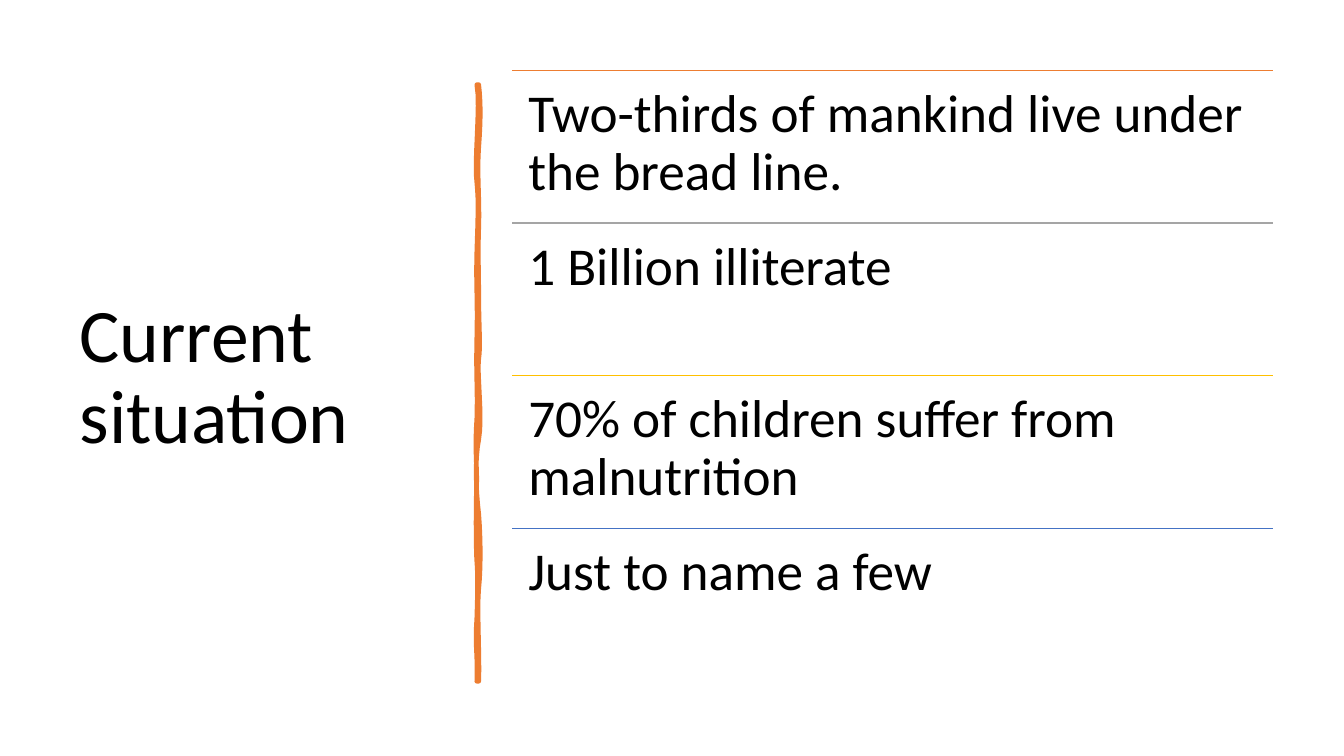
from lxml import etree
from pptx import Presentation
from pptx.dml.color import RGBColor
from pptx.enum.shapes import MSO_CONNECTOR
from pptx.enum.text import MSO_ANCHOR
from pptx.oxml.ns import qn
from pptx.util import Inches, Pt

STRAIGHT = MSO_CONNECTOR.STRAIGHT
TOP = MSO_ANCHOR.TOP
MIDDLE = MSO_ANCHOR.MIDDLE

BLACK = RGBColor(0x00, 0x00, 0x00)
ORANGE = RGBColor(0xED, 0x7D, 0x31)
GREY = RGBColor(0xA5, 0xA5, 0xA5)
GOLD = RGBColor(0xFF, 0xC0, 0x00)
BLUE = RGBColor(0x44, 0x72, 0xC4)

GRID = 100
LIST_LEFT, LIST_WIDTH = 38.11, 56.64
CONTENT_TOP, ROW_PITCH = 9.33, 20.18
BRUSH_AXIS, SWAY_UNIT, CURVE_STEPS = 35.55, 0.075, 8

FACTS = [
    ("Two-thirds of mankind live under the bread line.", ORANGE),
    ("1 Billion illiterate", GREY),
    ("70% of children suffer from malnutrition", GOLD),
    ("Just to name a few", BLUE),
]

RIGHT_EDGE = [
    (1, 11.2), (3, 13.6), (3, 15.87), (1, 19.47), (-1, 23.07), (2, 26),
    (1, 30.13), (0, 34.27), (1, 34.93), (1, 39.2), (1, 43.33), (3, 45.6),
    (1, 47.47), (-1, 49.33), (5, 55.2), (1, 58.13), (-3, 60.93), (-2, 64.53),
    (1, 68), (3, 71.47), (3, 75.2), (1, 77.87), (-1, 80.4), (2, 86.67),
    (1, 90.13),
]
LEFT_EDGE = [
    (-1, 90.13), (0, 86.13), (-3, 85.87), (-1, 81.73), (0, 77.73), (0, 76),
    (-1, 74.27), (-2, 72.53), (-2, 66), (-1, 63.6), (-1, 61.2), (-3, 59.33),
    (-1, 55.33), (0, 51.47), (-2, 49.73), (-1, 44.67), (0, 39.73),
    (-2, 37.47), (-1, 33.33), (0, 29.07), (1, 26.67), (-1, 24.13),
    (-4, 21.73), (3, 13.87), (-1, 11.2),
]


def curve_points(controls):
    """Return points along a chain of cubic curves."""
    points = [controls[0]]
    for first in range(0, len(controls) - 1, 3):
        segment = controls[first:first + 4]
        for step in range(1, CURVE_STEPS + 1):
            t = step / CURVE_STEPS
            weights = ((1 - t) ** 3, 3 * t * (1 - t) ** 2,
                       3 * t ** 2 * (1 - t), t ** 3)
            points.append(tuple(
                sum(weight * point[axis]
                    for weight, point in zip(weights, segment))
                for axis in (0, 1)))
    return points


class SlidePainter:
    """Draws styled elements on a page measured in grid columns and rows."""

    font = "Calibri"
    line_spacing = 0.9

    def __init__(self, deck):
        self.page = deck.slides.add_slide(deck.slide_layouts[6])
        self.column = deck.slide_width / GRID
        self.row = deck.slide_height / GRID

    def place(self, column, row):
        return round(column * self.column), round(row * self.row)

    def text(self, words, left, top, width, height, size, anchor, inset):
        box = self.page.shapes.add_textbox(
            *self.place(left, top), *self.place(width, height))
        frame = box.text_frame
        frame.word_wrap = True
        frame.vertical_anchor = anchor
        frame.margin_left = frame.margin_right = Inches(inset)
        frame.margin_top = frame.margin_bottom = Inches(inset)
        frame.text = words
        para = frame.paragraphs[0]
        para.line_spacing = self.line_spacing
        span = para.runs[0]
        span.font.name = self.font
        span.font.size = Pt(size)
        span.font.color.rgb = BLACK

    def rule(self, left, top, width, color):
        line = self.page.shapes.add_connector(
            STRAIGHT, *self.place(left, top), *self.place(left + width, top))
        line.line.color.rgb = color
        line.line.width = Pt(1)
        etree.SubElement(line._element.spPr, qn("a:effectLst"))

    def brush_stroke(self, axis, controls, color):
        points = [self.place(axis + sway * SWAY_UNIT, row)
                  for sway, row in controls]
        builder = self.page.shapes.build_freeform(*points[0])
        builder.add_line_segments(points[1:], close=True)
        stroke = builder.convert_to_shape()
        stroke.shadow.inherit = False
        stroke.fill.solid()
        stroke.fill.fore_color.rgb = color
        stroke.line.color.rgb = color
        stroke.line.width = Pt(3.25)


def main():
    deck = Presentation()
    deck.slide_width = Inches(13.33)
    deck.slide_height = Inches(7.5)
    painter = SlidePainter(deck)

    painter.text("Current situation", 5.18, CONTENT_TOP, 28.06, 81.47,
                 54, MIDDLE, 0.1)
    painter.brush_stroke(
        BRUSH_AXIS, curve_points(RIGHT_EDGE) + curve_points(LEFT_EDGE), ORANGE)
    for index, (fact, color) in enumerate(FACTS):
        top = CONTENT_TOP + index * ROW_PITCH
        painter.rule(LIST_LEFT, top, LIST_WIDTH, color)
        painter.text(fact, LIST_LEFT, top, LIST_WIDTH, ROW_PITCH,
                     38, TOP, 0.16)

    deck.save("out.pptx")


if __name__ == "__main__":
    main()
